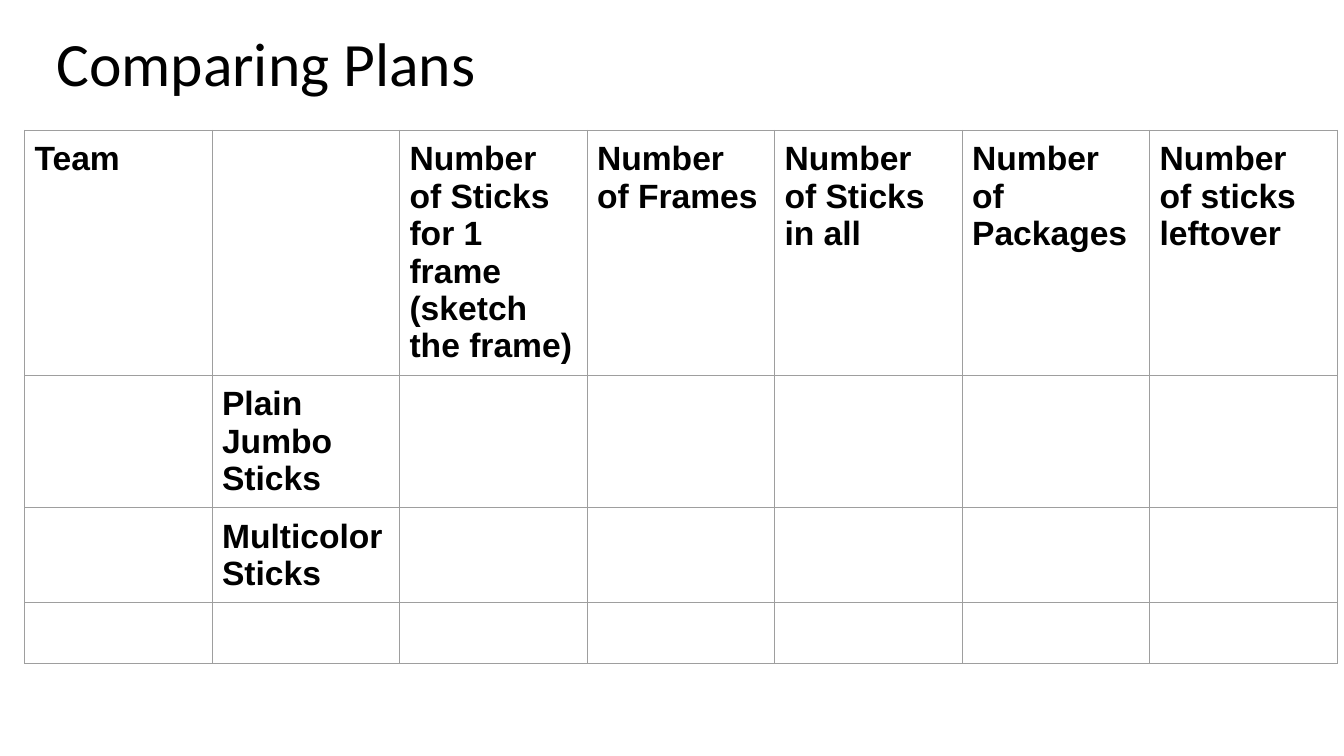
from dataclasses import dataclass

from lxml.etree import SubElement
from pptx import Presentation
from pptx.dml.color import RGBColor
from pptx.enum.text import MSO_ANCHOR, MSO_AUTO_SIZE, PP_ALIGN
from pptx.oxml.ns import qn
from pptx.slide import Slide
from pptx.table import _Cell
from pptx.text.text import _Paragraph
from pptx.util import Pt


@dataclass(frozen=True)
class TextStyle:
    font: str
    size: float
    bold: bool


@dataclass(frozen=True)
class Theme:
    ink: str = "000000"
    grid: str = "9E9E9E"
    grid_width: float = 0.75
    cell_margin: float = 7.2
    title: TextStyle = TextStyle("Calibri", 44, False)
    label: TextStyle = TextStyle("Arial", 24, True)


@dataclass(frozen=True)
class PlanRow:
    height: float
    labels: tuple[str, ...]


THEME = Theme()
COLUMN_COUNT = 7
COLUMN_WIDTH = 133.95
TABLE_LEFT, TABLE_TOP = 17.5, 93
ROWS = (
    PlanRow(126, (
        "Team",
        "",
        "Number of Sticks for 1 frame (sketch the frame)",
        "Number of Frames",
        "Number of Sticks in all",
        "Number of Packages",
        "Number of sticks leftover",
    )),
    PlanRow(43.2, ("", "Plain Jumbo Sticks")),
    PlanRow(43.2, ("", "Multicolor Sticks")),
    PlanRow(43.2, ()),
)


def add_span(para: _Paragraph, text: str, style: TextStyle) -> None:
    span = para.add_run()
    span.text = text
    span.font.name = style.font
    span.font.size = Pt(style.size)
    span.font.bold = style.bold
    span.font.color.rgb = RGBColor.from_string(THEME.ink)


def add_title(page: Slide, text: str) -> None:
    box = page.shapes.title
    box.left, box.top, box.width, box.height = Pt(33), Pt(27.5), Pt(828), Pt(40)
    frame = box.text_frame
    frame.word_wrap = True
    frame.auto_size = MSO_AUTO_SIZE.NONE
    frame.vertical_anchor = MSO_ANCHOR.MIDDLE
    para = frame.paragraphs[0]
    para.alignment = PP_ALIGN.LEFT
    para.line_spacing = 0.9
    add_span(para, text, THEME.title)


def format_cell(cell: _Cell) -> None:
    margin = Pt(THEME.cell_margin)
    cell.margin_left = cell.margin_right = margin
    cell.margin_top = cell.margin_bottom = margin
    # Borders come before the fill in the cell properties
    properties = cell._tc.get_or_add_tcPr()
    for side in ("a:lnL", "a:lnR", "a:lnT", "a:lnB"):
        line = SubElement(properties, qn(side), w=str(Pt(THEME.grid_width)))
        fill = SubElement(line, qn("a:solidFill"))
        SubElement(fill, qn("a:srgbClr"), val=THEME.grid)
    cell.fill.background()


def add_plan_table(page: Slide, rows: tuple[PlanRow, ...]) -> None:
    table = page.shapes.add_table(
        len(rows), COLUMN_COUNT, Pt(TABLE_LEFT), Pt(TABLE_TOP),
        Pt(COLUMN_WIDTH * COLUMN_COUNT), Pt(sum(row.height for row in rows)),
    ).table
    table.first_row = False
    table.horz_banding = False
    for column in table.columns:
        column.width = Pt(COLUMN_WIDTH)
    for index, row in enumerate(rows):
        table.rows[index].height = Pt(row.height)
        for cell in table.rows[index].cells:
            format_cell(cell)
        for column_index, label in enumerate(row.labels):
            if label:
                para = table.cell(index, column_index).text_frame.paragraphs[0]
                add_span(para, label, THEME.label)


def main() -> None:
    deck = Presentation()
    deck.slide_width, deck.slide_height = Pt(960), Pt(540)
    page = deck.slides.add_slide(deck.slide_layouts.get_by_name("Title Only"))

    # Heading
    add_title(page, "Comparing Plans")

    # Worksheet grid
    add_plan_table(page, ROWS)

    deck.save("out.pptx")


if __name__ == "__main__":
    main()
